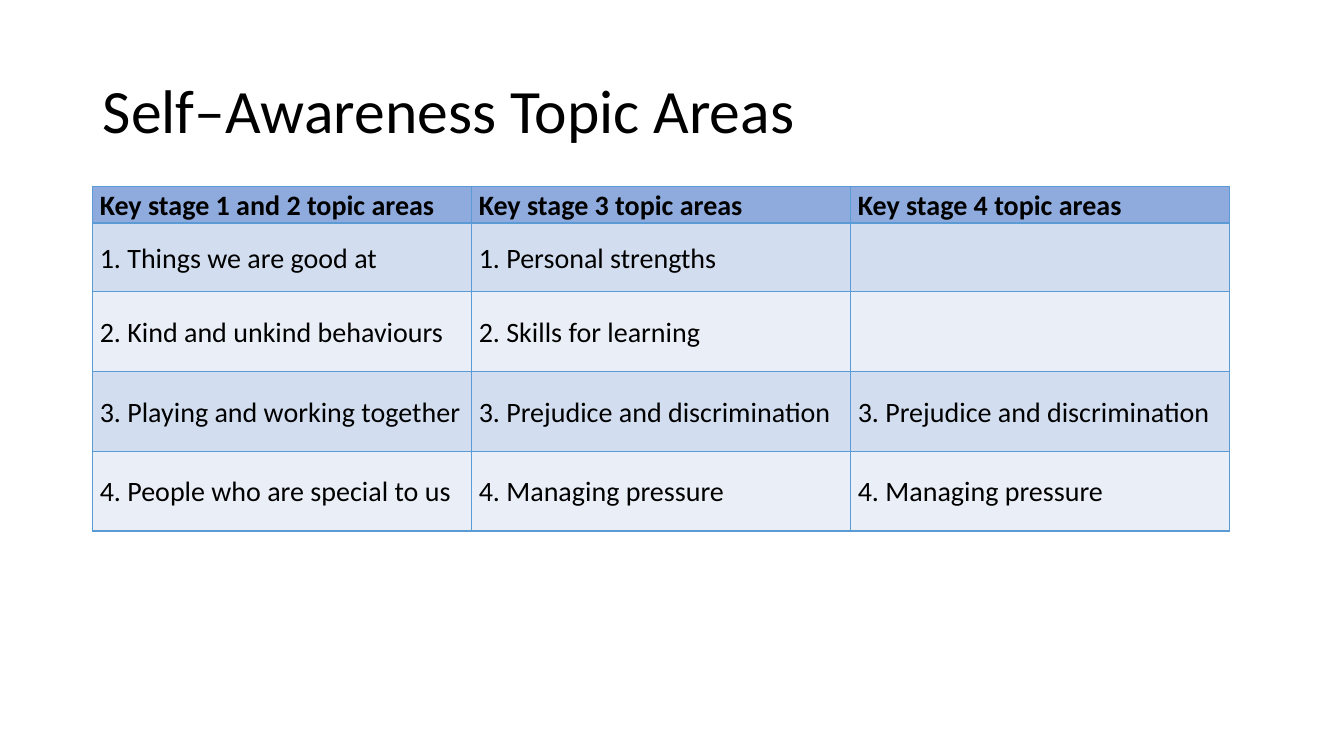
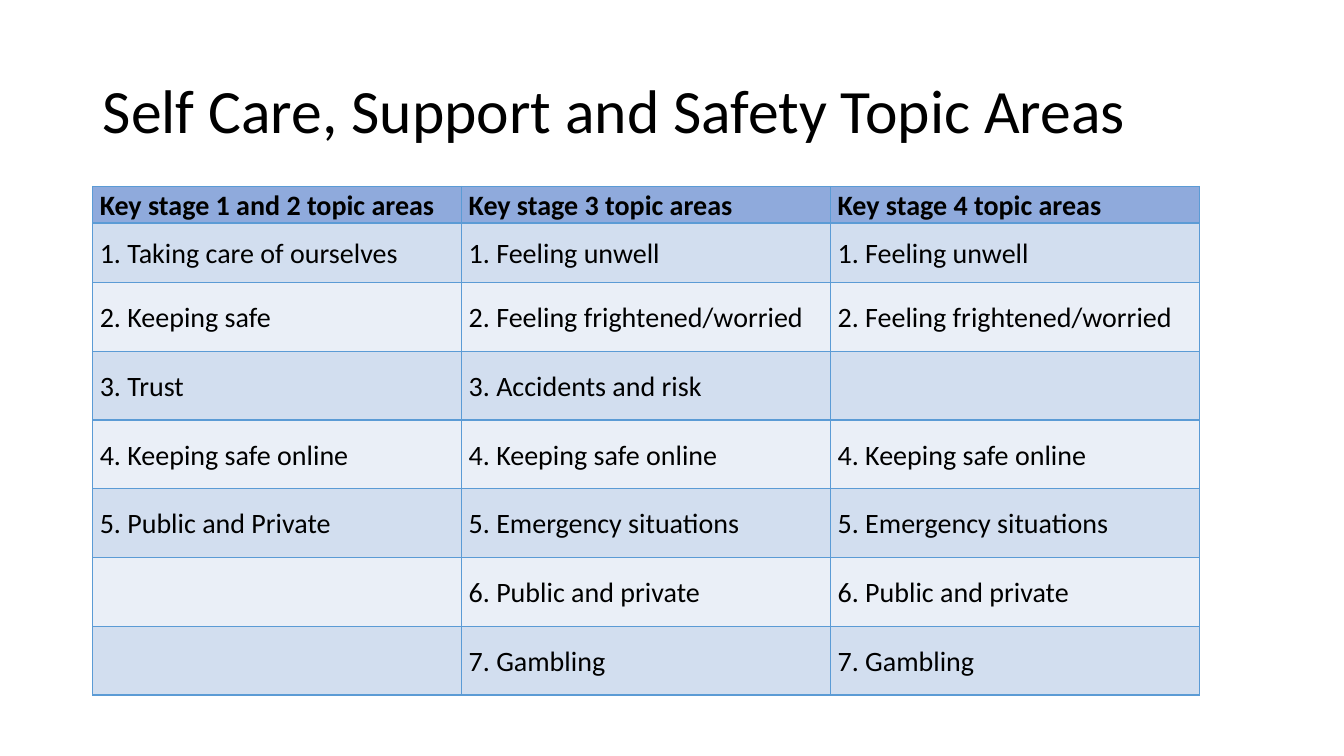
from dataclasses import dataclass
from itertools import product

from lxml.etree import SubElement
from pptx import Presentation
from pptx.dml.color import RGBColor
from pptx.enum.text import MSO_ANCHOR, MSO_AUTO_SIZE, PP_ALIGN
from pptx.oxml.ns import qn
from pptx.util import Inches, Pt

SLIDE_WIDTH = Inches(13.33)
SLIDE_HEIGHT = Inches(7.5)
TITLE_ONLY = 5


@dataclass(frozen=True)
class Theme:
    font: str = "Calibri"
    text: str = "000000"
    header_fill: str = "8FAADC"
    band_fills: tuple[str, str] = ("D2DEEF", "EAEFF7")
    border: str = "5B9BD5"
    border_width: int = Pt(1)
    title_size: int = 44
    table_size: int = 20
    title_spacing: float = 0.9
    table_spacing: float = 1.07


@dataclass(frozen=True)
class TopicPage:
    """A title and its topics; sizes are percentages of the slide."""
    title: str
    column_width: float
    first_height: float
    row_height: float
    topics: tuple[tuple[str, str, str], ...]


THEME = Theme()
LEFT = 6.9
TITLE_TOP, TITLE_WIDTH, TITLE_HEIGHT = 5.33, 86.25, 19.32
TABLE_TOP = TITLE_TOP + TITLE_HEIGHT
HEADER_HEIGHT = 4.8
SIDE_MARGIN = Inches(0.07)
HEADERS = (
    "Key stage 1 and 2 topic areas",
    "Key stage 3 topic areas",
    "Key stage 4 topic areas",
)
PAGES = (
    TopicPage("Self–Awareness Topic Areas", 28.2, 9.1, 10.55, (
        ("1. Things we are good at", "1. Personal strengths", ""),
        ("2. Kind and unkind behaviours", "2. Skills for learning", ""),
        ("3. Playing and working together", "3. Prejudice and discrimination",
         "3. Prejudice and discrimination"),
        ("4. People who are special to us", "4. Managing pressure",
         "4. Managing pressure"),
    )),
    TopicPage("Self Care, Support and Safety Topic Areas", 27.45, 7.85, 9.1, (
        ("1. Taking care of ourselves", "1. Feeling unwell", "1. Feeling unwell"),
        ("2. Keeping safe", "2. Feeling frightened/worried",
         "2. Feeling frightened/worried"),
        ("3. Trust", "3. Accidents and risk", ""),
        ("4. Keeping safe online", "4. Keeping safe online",
         "4. Keeping safe online"),
        ("5. Public and Private", "5. Emergency situations",
         "5. Emergency situations"),
        ("", "6. Public and private", "6. Public and private"),
        ("", "7. Gambling", "7. Gambling"),
    )),
)


def across(percent: float) -> int:
    return round(SLIDE_WIDTH * percent / 100)


def down(percent: float) -> int:
    return round(SLIDE_HEIGHT * percent / 100)


def write_text(frame, text: str, *, size: int, spacing: float,
               bold: bool = False) -> None:
    frame.word_wrap = True
    para = frame.paragraphs[0]
    para.alignment = PP_ALIGN.LEFT
    para.line_spacing = spacing
    para.font.size = Pt(size)
    if text:
        span = para.add_run()
        span.text = text
        span.font.name = THEME.font
        span.font.size = Pt(size)
        span.font.bold = bold
        span.font.color.rgb = RGBColor.from_string(THEME.text)


def add_borders(cell) -> None:
    """Outline the cell; call before filling, as borders precede the fill."""
    properties = cell._tc.get_or_add_tcPr()
    for side in ("a:lnL", "a:lnR", "a:lnT", "a:lnB"):
        line = SubElement(properties, qn(side), w=str(THEME.border_width))
        fill = SubElement(line, qn("a:solidFill"))
        SubElement(fill, qn("a:srgbClr"), val=THEME.border)


def format_cell(cell, text: str, *, fill: str, bold: bool) -> None:
    cell.margin_left = cell.margin_right = SIDE_MARGIN
    cell.margin_top = cell.margin_bottom = 0
    cell.vertical_anchor = MSO_ANCHOR.MIDDLE
    add_borders(cell)
    cell.fill.solid()
    cell.fill.fore_color.rgb = RGBColor.from_string(fill)
    write_text(cell.text_frame, text, size=THEME.table_size,
               spacing=THEME.table_spacing, bold=bold)


def set_title(page, text: str) -> None:
    box = page.shapes.title
    box.left, box.top = across(LEFT), down(TITLE_TOP)
    box.width, box.height = across(TITLE_WIDTH), down(TITLE_HEIGHT)
    frame = box.text_frame
    frame.auto_size = MSO_AUTO_SIZE.NONE
    frame.vertical_anchor = MSO_ANCHOR.MIDDLE
    write_text(frame, text, size=THEME.title_size, spacing=THEME.title_spacing)


def add_topic_table(page, content: TopicPage) -> None:
    rows = (HEADERS, *content.topics)
    heights = [HEADER_HEIGHT, content.first_height]
    heights += [content.row_height] * (len(rows) - len(heights))
    table = page.shapes.add_table(
        len(rows), len(HEADERS), across(LEFT), down(TABLE_TOP),
        across(content.column_width * len(HEADERS)), down(sum(heights)),
    ).table
    table.first_row = table.horz_banding = False
    for column in table.columns:
        column.width = across(content.column_width)
    for row, height in zip(table.rows, heights):
        row.height = down(height)
    for row, column in product(range(len(rows)), range(len(HEADERS))):
        is_header = row == 0
        fill = THEME.header_fill if is_header else THEME.band_fills[(row - 1) % 2]
        format_cell(table.cell(row, column), rows[row][column],
                    fill=fill, bold=is_header)


def main() -> None:
    deck = Presentation()
    deck.slide_width, deck.slide_height = SLIDE_WIDTH, SLIDE_HEIGHT
    for content in PAGES:
        page = deck.slides.add_slide(deck.slide_layouts[TITLE_ONLY])
        set_title(page, content.title)
        add_topic_table(page, content)
    deck.save("out.pptx")


if __name__ == "__main__":
    main()
